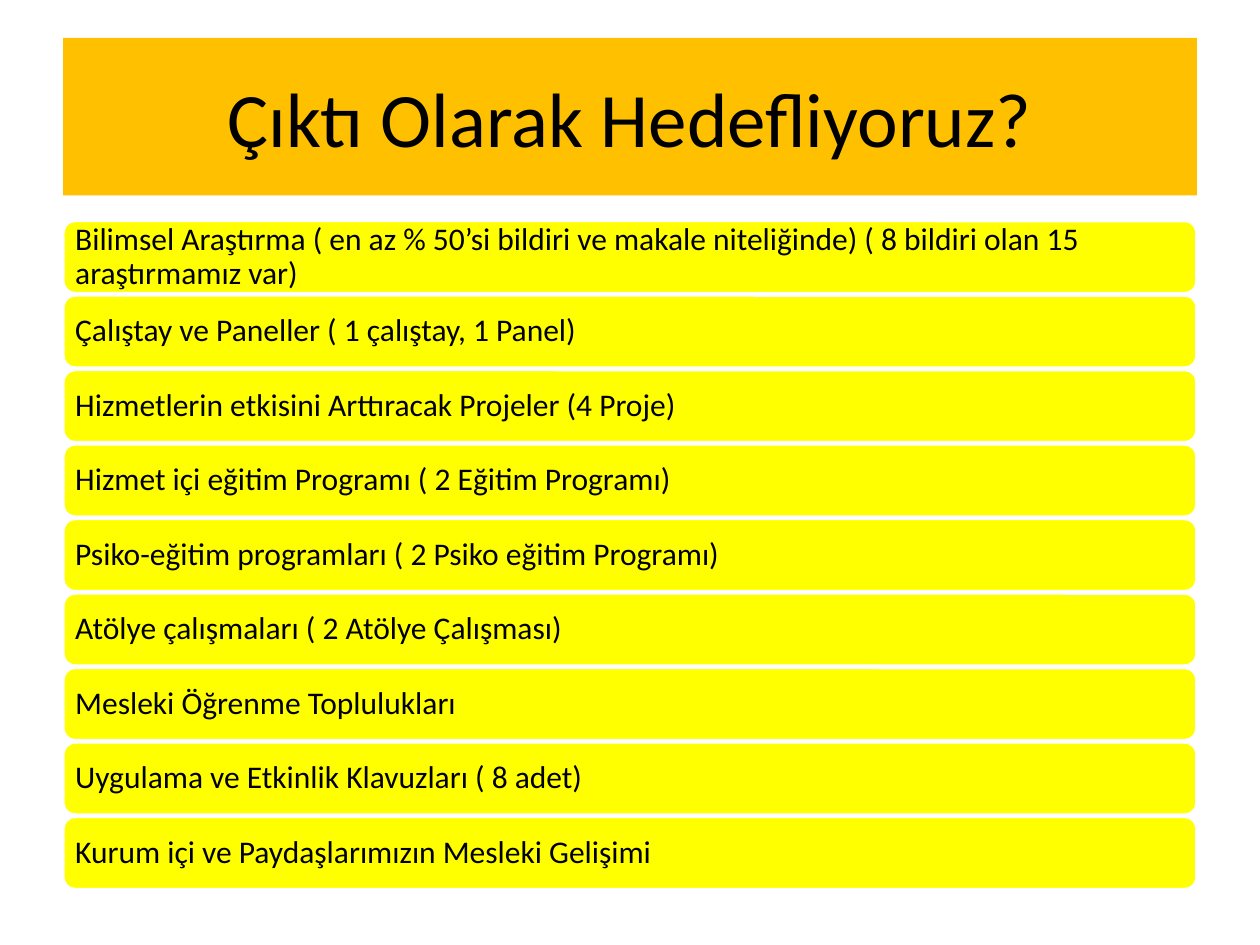
"""Build the slide that lists the targeted outputs as a stack of yellow bars."""
from dataclasses import dataclass

import pptx
import pptx.dml.color
import pptx.enum.shapes
import pptx.enum.text
import pptx.util

TITLE = "Çıktı Olarak Hedefliyoruz?"
OUTPUTS = [
    "Bilimsel Araştırma ( en az % 50’si bildiri ve makale niteliğinde) ( 8 bildiri olan 15 araştırmamız var)",
    "Çalıştay ve Paneller ( 1 çalıştay, 1 Panel)",
    "Hizmetlerin etkisini Arttıracak Projeler (4 Proje)",
    "Hizmet içi eğitim Programı ( 2 Eğitim Programı)",
    "Psiko-eğitim programları ( 2 Psiko eğitim Programı)",
    "Atölye çalışmaları ( 2 Atölye Çalışması)",
    "Mesleki Öğrenme Toplulukları",
    "Uygulama ve Etkinlik Klavuzları ( 8 adet)",
    "Kurum içi ve Paydaşlarımızın Mesleki Gelişimi",
]
LEFT, WIDTH = 36, 648
FIRST_TOP, BAR_HEIGHT, BAR_PITCH = 126, 41.76, 42.57


@dataclass
class Bar:
    text: str
    top: float


def set_color(color_format, color: str) -> None:
    color_format.rgb = pptx.dml.color.RGBColor.from_string(color)


def set_fill(shape, color: str) -> None:
    shape.fill.solid()
    set_color(shape.fill.fore_color, color)


def write_text(shape, text: str, *, size: float, alignment, color: str = "000000",
               font: str = "Calibri", line_spacing: float = 1.0) -> None:
    frame = shape.text_frame
    frame.word_wrap = True
    frame.vertical_anchor = pptx.enum.text.MSO_ANCHOR.MIDDLE
    paragraph = frame.paragraphs[0]
    paragraph.alignment = alignment
    paragraph.line_spacing = line_spacing
    run = paragraph.add_run()
    run.text = text
    run.font.size = pptx.util.Pt(size)
    run.font.name = font
    set_color(run.font.color, color)


def draw_title(slide, text: str) -> None:
    title = slide.shapes.title
    title.left, title.top = pptx.util.Pt(LEFT), pptx.util.Pt(21.6)
    title.width, title.height = pptx.util.Pt(WIDTH), pptx.util.Pt(90)
    set_fill(title, "FFC000")
    write_text(title, text, size=44, alignment=pptx.enum.text.PP_ALIGN.CENTER)


def draw_bar(slide, bar: Bar) -> None:
    shape = slide.shapes.add_shape(
        pptx.enum.shapes.MSO_SHAPE.ROUNDED_RECTANGLE,
        pptx.util.Pt(LEFT), pptx.util.Pt(bar.top),
        pptx.util.Pt(WIDTH), pptx.util.Pt(BAR_HEIGHT))
    shape.shadow.inherit = False
    set_fill(shape, "FFFF00")
    set_color(shape.line.color, "FFFFFF")
    shape.line.width = pptx.util.Pt(2)
    frame = shape.text_frame
    frame.margin_left = frame.margin_right = pptx.util.Pt(5)
    frame.margin_top = frame.margin_bottom = pptx.util.Pt(0)
    write_text(shape, bar.text, size=18, line_spacing=0.9,
               alignment=pptx.enum.text.PP_ALIGN.LEFT)


def main() -> None:
    presentation = pptx.Presentation()
    presentation.slide_width = pptx.util.Pt(720)
    presentation.slide_height = pptx.util.Pt(540)
    slide = presentation.slides.add_slide(presentation.slide_layouts[5])
    draw_title(slide, TITLE)
    for index, text in enumerate(OUTPUTS):
        draw_bar(slide, Bar(text, FIRST_TOP + index * BAR_PITCH))
    presentation.save("out.pptx")


if __name__ == "__main__":
    main()
